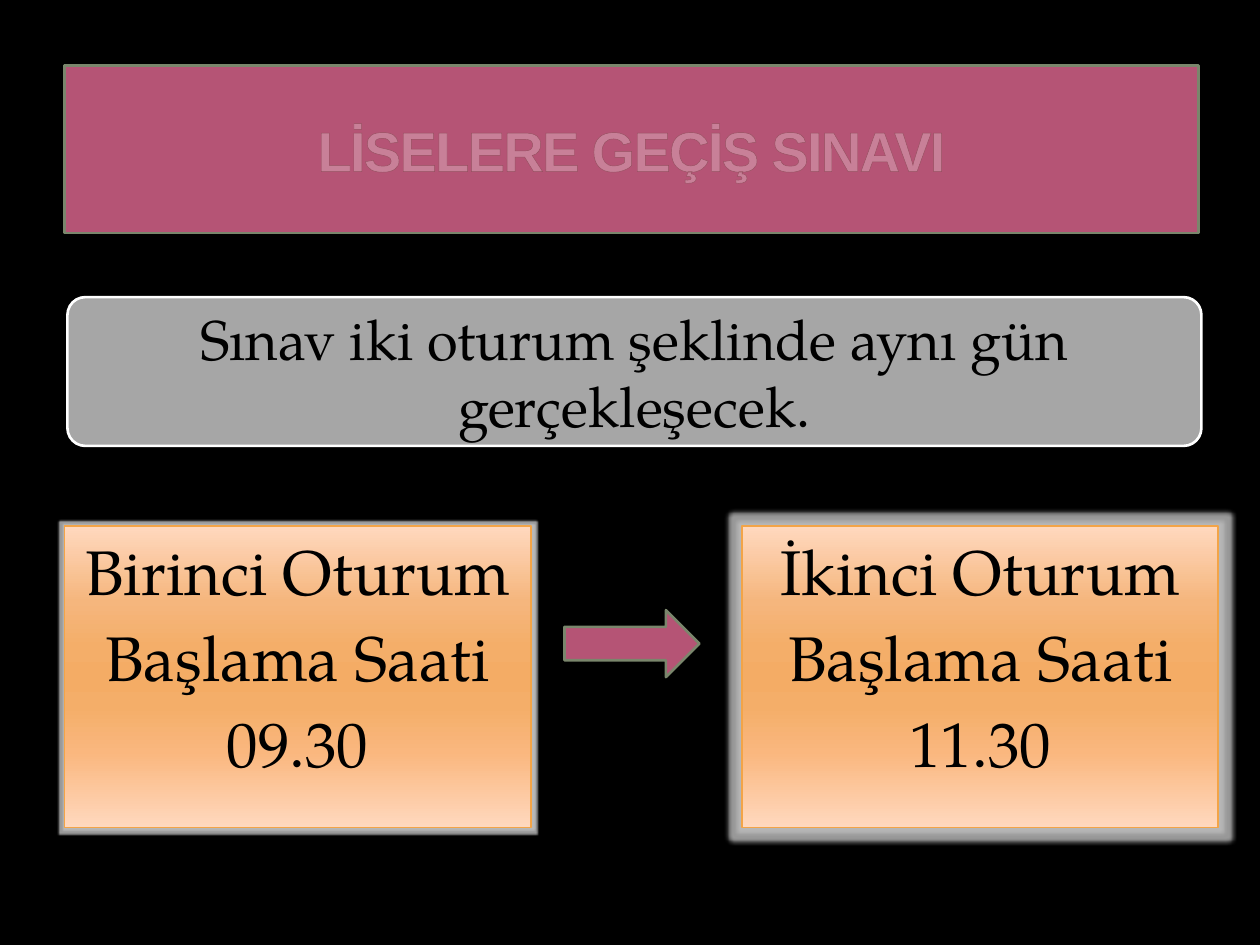
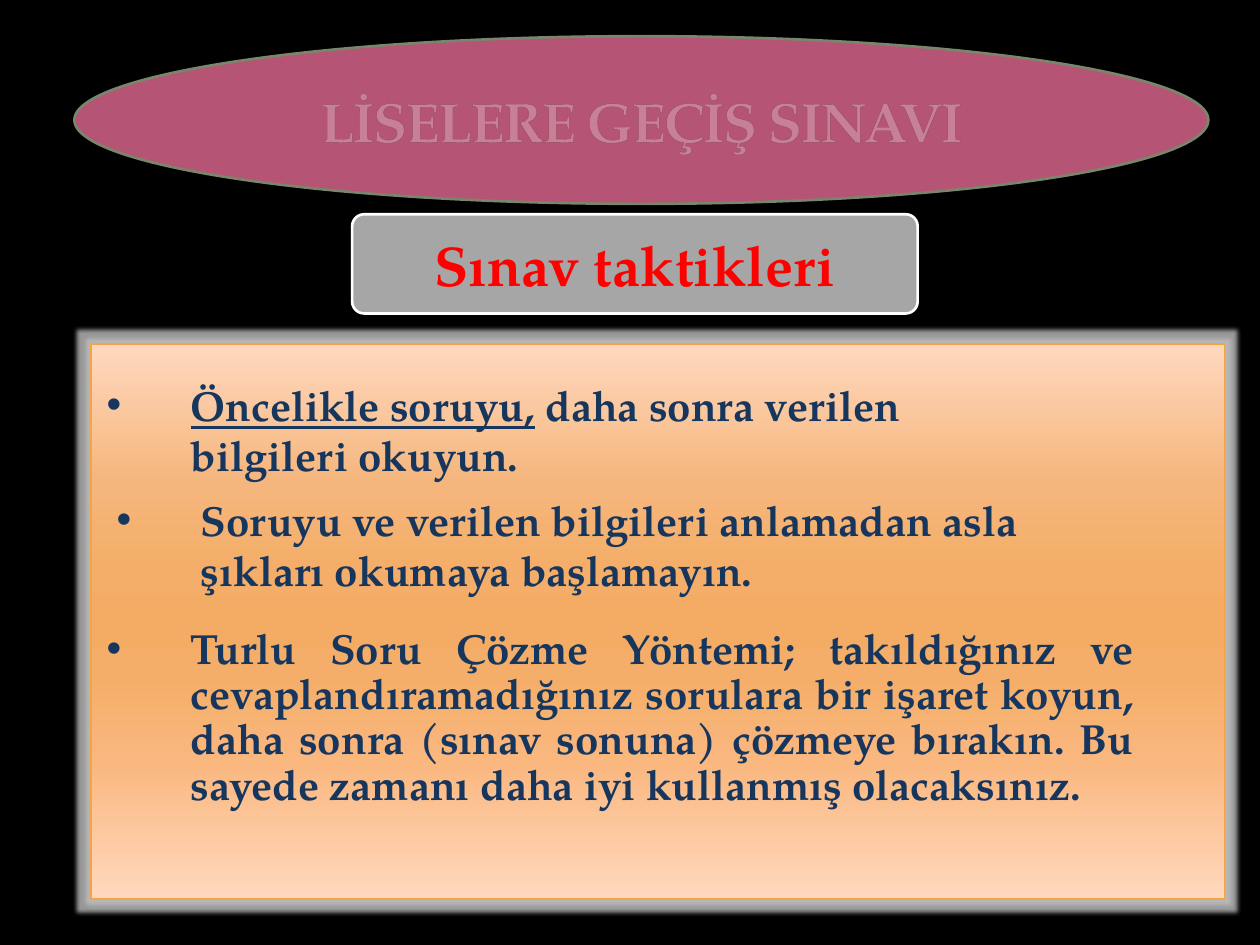
"""Builds two slides on the high school entrance exam: session times and exam tactics."""
from dataclasses import dataclass

from lxml import etree
from pptx import Presentation
from pptx.dml.color import RGBColor
from pptx.enum.shapes import MSO_SHAPE
from pptx.enum.text import MSO_ANCHOR, PP_ALIGN
from pptx.oxml.ns import qn
from pptx.util import Cm, Pt

RECTANGLE = MSO_SHAPE.RECTANGLE
ROUNDED = MSO_SHAPE.ROUNDED_RECTANGLE
ELLIPSE = MSO_SHAPE.OVAL
ARROW = MSO_SHAPE.RIGHT_ARROW
MIDDLE = MSO_ANCHOR.MIDDLE
TOP = MSO_ANCHOR.TOP
CENTER = PP_ALIGN.CENTER
LEFT = PP_ALIGN.LEFT
JUSTIFY = PP_ALIGN.JUSTIFY


@dataclass(frozen=True)
class Theme:
    """Colours, fonts and type sizes of the deck."""
    background: str = "000000"
    accent: str = "B55475"
    accent_line: str = "7A866C"
    heading_fill: str = "A6A6A6"
    white: str = "FFFFFF"
    black: str = "000000"
    alert: str = "FF0000"
    advice: str = "17365D"
    title_outline: str = "3C4422"
    panel_line: str = "F3A447"
    glow: str = "BFBFBF"
    panel_stops: tuple = ((0, "FFD8BE"), (25, "F5B67D"), (40, "F4AE69"), (50, "F4AC65"),
                          (60, "F4AE69"), (75, "FAB77E"), (100, "FFD8BE"))
    serif: str = "TeX Gyre Pagella"
    sans: str = "Arial"
    heading_size: int = 32
    session_size: int = 36
    advice_size: int = 24


THEME = Theme()


@dataclass(frozen=True)
class Box:
    """A place on the slide in centimetres."""
    left: float
    top: float
    width: float
    height: float

    def lengths(self) -> tuple:
        """Return the four lengths for python-pptx."""
        return Cm(self.left), Cm(self.top), Cm(self.width), Cm(self.height)


@dataclass(frozen=True)
class Session:
    """An exam session with its panel."""
    box: Box
    ordinal: str
    start: str
    glow: float


@dataclass(frozen=True)
class Advice:
    """One bulleted exam tactic, with an optional underlined opening."""
    box: Box
    text: str
    underlined: str = ""
    align: PP_ALIGN = LEFT
    spacing: float = 1.0


TITLE = "LİSELERE GEÇİŞ SINAVI"

SESSIONS = (
    Session(Box(1.3, 10.61, 9.4, 6.07), "Birinci", "09.30", 2),
    Session(Box(14.96, 10.61, 9.6, 6.07), "İkinci", "11.30", 5),
)

TACTICS = (
    Advice(Box(1.9, 7.52, 19.2, 2.31), " daha sonra verilen bilgileri okuyun.",
           "Öncelikle soruyu,"),
    Advice(Box(2.1, 9.84, 20.4, 2.31),
           "Soruyu ve verilen bilgileri anlamadan asla şıkları okumaya başlamayın."),
    Advice(Box(1.9, 12.53, 21.2, 4.88),
           "Turlu Soru Çözme Yöntemi; takıldığınız ve cevaplandıramadığınız sorulara bir "
           "işaret koyun, daha sonra (sınav sonuna) çözmeye bırakın. Bu sayede zamanı daha "
           "iyi kullanmış olacaksınız.", align=JUSTIFY, spacing=0.9),
)


def add_color(parent, color: str, alpha: int = 100) -> None:
    """Append an RGB colour element with its opacity in percent."""
    element = etree.SubElement(parent, qn("a:srgbClr"), val=color)
    if alpha < 100:
        etree.SubElement(element, qn("a:alpha"), val=str(alpha * 1000))


def add_run(paragraph, text: str, size: int, color: str, font: str = THEME.serif,
            bold: bool = False, underline: bool = False):
    """Append a formatted run."""
    run = paragraph.add_run()
    run.text = text
    run.font.size = Pt(size)
    run.font.name = font
    run.font.bold = bold
    run.font.underline = underline
    run.font.color.rgb = RGBColor.from_string(color)
    return run


def add_figure(slide, kind: MSO_SHAPE, box: Box, line: str, weight: float, fill: str = ""):
    """Draw a shadowless preset shape with an outline and an optional solid fill."""
    figure = slide.shapes.add_shape(kind, *box.lengths())
    figure.shadow.inherit = False
    if fill:
        figure.fill.solid()
        figure.fill.fore_color.rgb = RGBColor.from_string(fill)
    figure.line.color.rgb = RGBColor.from_string(line)
    figure.line.width = Pt(weight)
    figure.text_frame.word_wrap = True
    return figure


def add_title(slide, kind: MSO_SHAPE, box: Box, font: str) -> None:
    """Draw the title band with outlined lettering."""
    band = add_figure(slide, kind, box, THEME.accent_line, 1.5, THEME.accent)
    band.text_frame.vertical_anchor = MIDDLE
    paragraph = band.text_frame.paragraphs[0]
    paragraph.alignment = CENTER
    run = add_run(paragraph, TITLE, THEME.heading_size, THEME.white, font, bold=True)
    properties = run.font._element
    properties.set("spc", "-100")
    outline = etree.Element(qn("a:ln"), w=str(Pt(0.25)))
    add_color(etree.SubElement(outline, qn("a:solidFill")), THEME.title_outline, 25)
    etree.SubElement(outline, qn("a:prstDash"), val="solid")
    properties.insert(0, outline)


def add_heading(slide, box: Box, text: str, color: str, bold: bool = False) -> None:
    """Draw a grey rounded heading."""
    heading = add_figure(slide, ROUNDED, box, THEME.white, 1.5, THEME.heading_fill)
    heading.adjustments[0] = 0.12
    frame = heading.text_frame
    frame.vertical_anchor = MIDDLE
    frame.margin_left = frame.margin_right = frame.margin_top = frame.margin_bottom = Cm(0.38)
    frame.paragraphs[0].alignment = CENTER
    add_run(frame.paragraphs[0], text, THEME.heading_size, color, bold=bold)


def add_panel(slide, box: Box, glow: float):
    """Draw an orange gradient panel with a glow radius in points."""
    panel = add_figure(slide, RECTANGLE, box, THEME.panel_line, 0.94)
    panel.fill.gradient()
    panel.fill.gradient_angle = 270
    properties = panel._element.spPr
    stops = properties.find(qn("a:gradFill")).find(qn("a:gsLst"))
    stops.clear()
    for position, color in THEME.panel_stops:
        add_color(etree.SubElement(stops, qn("a:gs"), pos=str(position * 1000)), color)
    effects = properties.find(qn("a:effectLst"))
    add_color(etree.SubElement(effects, qn("a:glow"), rad=str(Pt(glow))), THEME.glow, 80)
    return panel


def add_session(slide, session: Session) -> None:
    """Draw a session panel with its name and starting time."""
    frame = add_panel(slide, session.box, session.glow).text_frame
    frame.vertical_anchor = TOP
    lines = (f"{session.ordinal} Oturum", "Başlama Saati", session.start)
    for index, line in enumerate(lines):
        paragraph = frame.add_paragraph() if index else frame.paragraphs[0]
        paragraph.alignment = CENTER
        if index:
            paragraph.space_before = Pt(6)
        add_run(paragraph, line, THEME.session_size, THEME.black)


def add_advice(slide, advice: Advice) -> None:
    """Write one bulleted tactic."""
    frame = slide.shapes.add_textbox(*advice.box.lengths()).text_frame
    frame.word_wrap = True
    paragraph = frame.paragraphs[0]
    properties = paragraph._p.get_or_add_pPr()
    properties.set("marL", str(Cm(1.7)))
    properties.set("indent", str(-Cm(1.7)))
    add_color(etree.SubElement(properties, qn("a:buClr")), THEME.advice)
    etree.SubElement(properties, qn("a:buFont"), typeface=THEME.sans)
    etree.SubElement(properties, qn("a:buChar"), char="•")
    paragraph.alignment = advice.align
    paragraph.line_spacing = advice.spacing
    for text, underline in ((advice.underlined, True), (advice.text, False)):
        if text:
            add_run(paragraph, text, THEME.advice_size, THEME.advice, bold=True,
                    underline=underline)


def add_slide(deck):
    """Add a blank slide with the dark background."""
    slide = deck.slides.add_slide(deck.slide_layouts[6])
    slide.background.fill.solid()
    slide.background.fill.fore_color.rgb = RGBColor.from_string(THEME.background)
    return slide


def build_sessions(deck) -> None:
    """Build the slide with the two session times."""
    slide = add_slide(deck)
    add_title(slide, RECTANGLE, Box(1.3, 1.32, 22.86, 3.38), THEME.sans)
    for session in SESSIONS:
        add_session(slide, session)
    add_figure(slide, ARROW, Box(11.38, 12.3, 2.72, 1.35), THEME.accent_line, 1.5, THEME.accent)
    add_heading(slide, Box(1.36, 5.99, 22.86, 3),
                "Sınav iki oturum şeklinde aynı gün gerçekleşecek.", THEME.black)


def build_tactics(deck) -> None:
    """Build the slide with the exam tactics."""
    slide = add_slide(deck)
    add_title(slide, ELLIPSE, Box(1.5, 0.73, 22.86, 3.38), THEME.serif)
    add_panel(slide, Box(1.83, 6.93, 22.86, 11.2), 5)
    add_heading(slide, Box(7.1, 4.32, 11.4, 2), "Sınav taktikleri", THEME.alert, bold=True)
    for advice in TACTICS:
        add_advice(slide, advice)


def main() -> None:
    """Build and save the deck."""
    deck = Presentation()
    deck.slide_width, deck.slide_height = Cm(25.4), Cm(19.05)
    build_sessions(deck)
    build_tactics(deck)
    deck.save("out.pptx")


if __name__ == "__main__":
    main()
